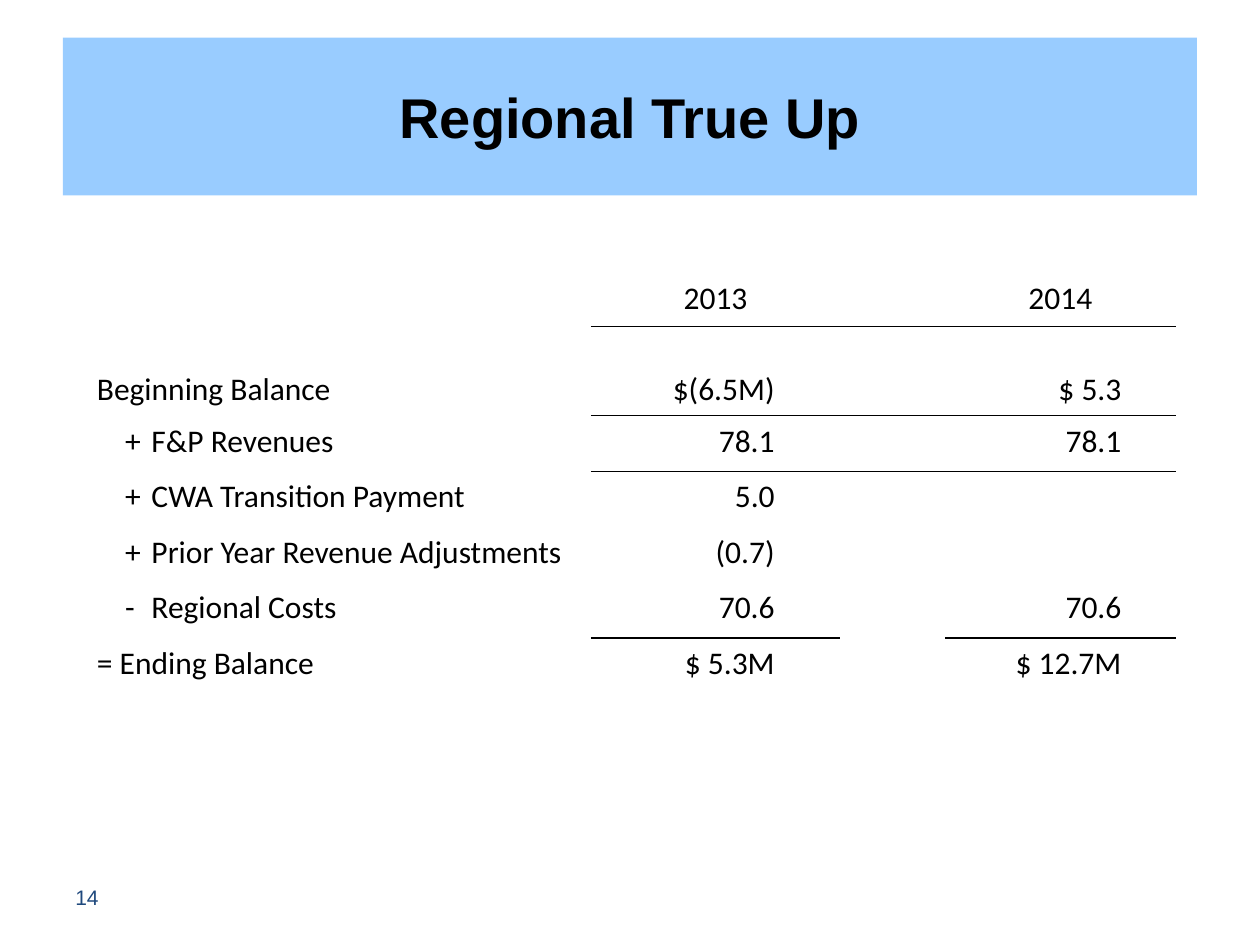
from lxml import etree
from pptx import Presentation
from pptx.dml.color import RGBColor
from pptx.enum import shapes, text
from pptx.oxml.ns import qn
from pptx.util import Cm, Pt

COLORS = {"banner": "99CCFF", "ink": "000000", "number": "1F497D"}
TITLE = "Regional True Up"
PAGE = "14"
YEARS = {1: "2013", 4: "2014"}
BALANCES = [
    ("", "Beginning Balance", "$(6.5M)", "$ 5.3"),
    ("+", "F&P Revenues", "78.1", "78.1"),
    ("+", "CWA Transition Payment", "5.0", ""),
    ("+", "Prior Year Revenue Adjustments", "(0.7)", ""),
    ("-", "Regional Costs", "70.6", "70.6"),
    ("", "= Ending Balance", "$ 5.3M", "$ 12.7M"),
]
COLUMN_WIDTHS = [10.21, 3.96, 1.07, 2.11, 3.81, 0.84]
ROW_HEIGHTS = [1.07, 1.8] + [1.12] * 5
RULED_BELOW = {0: range(1, 6), 1: range(1, 6), 5: (1, 2, 4, 5)}
NO_GRID_STYLE = "{2D5ABB26-0587-4C30-8999-92F81FD0307C}"
LEFT, CENTER, RIGHT = text.PP_ALIGN.LEFT, text.PP_ALIGN.CENTER, text.PP_ALIGN.RIGHT


def write(frame, words, font, size, color, align=LEFT, bold=False):
    paragraph = frame.paragraphs[0]
    paragraph.text = words
    paragraph.alignment = align
    paragraph.font.name = font
    paragraph.font.size = Pt(size)
    paragraph.font.bold = bold
    paragraph.font.color.rgb = RGBColor.from_string(COLORS[color])
    return paragraph


def write_cell(cell, words, align=LEFT):
    return write(cell.text_frame, words, "Calibri", 18, "ink", align)


def rule(cell, edge):
    line = etree.Element(qn(f"a:{edge}"), w=str(Pt(1)))
    fill = etree.SubElement(line, qn("a:solidFill"))
    etree.SubElement(fill, qn("a:srgbClr"), val=COLORS["ink"])
    cell._tc.get_or_add_tcPr().insert(0, line)


def add_banner(slide):
    banner = slide.shapes.add_shape(
        shapes.MSO_SHAPE.RECTANGLE, Cm(1.27), Cm(0.76), Cm(22.86), Cm(3.18))
    banner.shadow.inherit = False
    banner.fill.solid()
    banner.fill.fore_color.rgb = RGBColor.from_string(COLORS["banner"])
    banner.line.fill.background()
    banner.text_frame.vertical_anchor = text.MSO_ANCHOR.MIDDLE
    write(banner.text_frame, TITLE, "Arial", 32, "ink", CENTER, True)


def add_balances(slide):
    table_frame = slide.shapes.add_table(
        len(ROW_HEIGHTS), len(COLUMN_WIDTHS), Cm(1.7), Cm(5.51),
        Cm(sum(COLUMN_WIDTHS)), Cm(sum(ROW_HEIGHTS)))
    table = table_frame.table
    table.first_row = table.horz_banding = False
    table._tbl.tblPr.find(qn("a:tableStyleId")).text = NO_GRID_STYLE
    for column, width in zip(table.columns, COLUMN_WIDTHS):
        column.width = Cm(width)
    for row, height in zip(table.rows, ROW_HEIGHTS):
        row.height = Cm(height)
    for cell in table.iter_cells():
        cell.fill.background()

    for column, year in YEARS.items():
        table.cell(0, column).merge(table.cell(0, column + 1))
        write_cell(table.cell(0, column), year, CENTER)

    for row, (sign, label, *amounts) in enumerate(BALANCES, 1):
        words = f"{sign}\t{label}" if sign else label
        label_line = write_cell(table.cell(row, 0), words)
        if sign:
            properties = label_line._p.get_or_add_pPr()
            properties.set("marL", str(Cm(1.1)))
            properties.set("indent", str(Cm(-0.53)))
        for column, amount in zip(YEARS, amounts):
            if amount:
                write_cell(table.cell(row, column), amount, RIGHT)
    for cell in table.rows[1].cells:
        cell.vertical_anchor = text.MSO_ANCHOR.BOTTOM

    for row, columns in RULED_BELOW.items():
        for column in columns:
            rule(table.cell(row, column), "lnB")
            rule(table.cell(row + 1, column), "lnT")


def add_page_number(slide):
    number = slide.shapes.add_textbox(Cm(1.27), Cm(17.58), Cm(5.92), Cm(1.02))
    number.text_frame.word_wrap = True
    number.text_frame.vertical_anchor = text.MSO_ANCHOR.MIDDLE
    write(number.text_frame, PAGE, "Arial", 12, "number")


def main():
    deck = Presentation()
    deck.slide_width, deck.slide_height = Cm(25.4), Cm(19.05)
    slide = deck.slides.add_slide(deck.slide_layouts[6])
    add_banner(slide)
    add_page_number(slide)
    add_balances(slide)
    deck.save("out.pptx")


if __name__ == "__main__":
    main()
